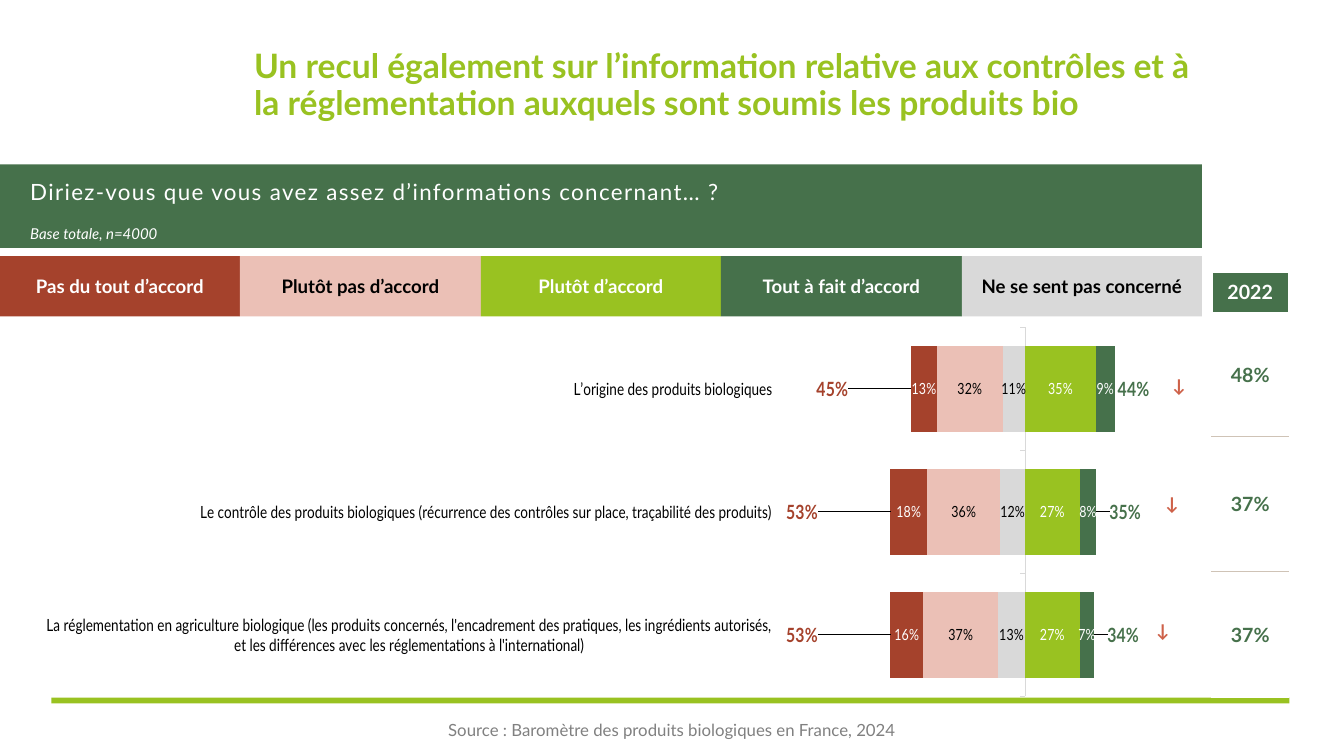
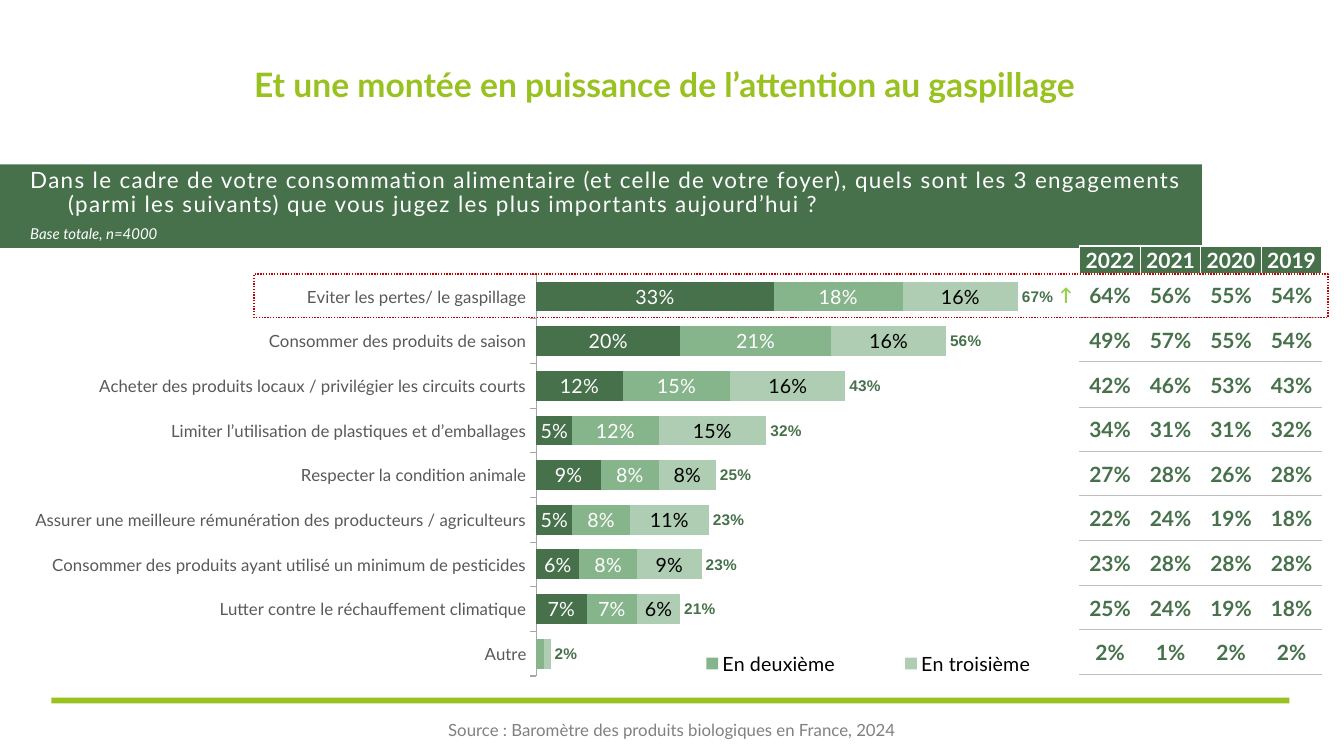
"""Build two survey slides on organic products and food commitments."""
from copy import deepcopy
from dataclasses import dataclass

from pptx import Presentation
from pptx.chart.data import CategoryChartData
from pptx.dml.color import RGBColor
from pptx.enum.chart import XL_CHART_TYPE, XL_LABEL_POSITION, XL_LEGEND_POSITION
from pptx.enum.chart import XL_TICK_LABEL_POSITION, XL_TICK_MARK
from pptx.enum.dml import MSO_LINE
from pptx.enum.shapes import MSO_SHAPE
from pptx.enum.text import MSO_ANCHOR, MSO_AUTO_SIZE, PP_ALIGN
from pptx.oxml import parse_xml
from pptx.oxml.ns import nsdecls, qn
from pptx.util import Pt


@dataclass(frozen=True)
class Theme:
    """Colours, fonts and type sizes."""
    font: str = "Lato"
    number_font: str = "Arial"
    arrow_font: str = "Calibri"
    white: str = "FFFFFF"
    black: str = "000000"
    lime: str = "99C221"
    green: str = "46714B"
    sage: str = "86B48B"
    mint: str = "AECDB2"
    brick: str = "A5422C"
    rose: str = "EBC0B6"
    light_gray: str = "D9D9D9"
    axis_gray: str = "A6A6A6"
    rule_gray: str = "BFBFBF"
    rule_beige: str = "CFC3B6"
    text_gray: str = "595959"
    source_gray: str = "808080"
    fall: str = "CE6149"
    rise: str = "92D050"
    frame: str = "C00000"
    title_size: float = 24
    question_size: float = 16
    base_size: float = 10.7
    small_size: float = 12
    key_size: float = 13.3
    label_size: float = 11
    value_size: float = 14
    table_size: float = 15


THEME = Theme()
PX = 9144
SLIDE_SIZE = (1333, 750)
TITLE_BOX = (252, 38, 940, 95)
QUESTION_BOX = (30, 163, 1162, 58)
BASE_BOX = (30, 223, 1162, 20)
BANDS = [((0, 163, 1192, 83), THEME.green), ((51, 692, 1228, 6), THEME.lime)]
SOURCE_BOX = (385, 697, 563, 54)
SOURCE = "Source : Baromètre des produits biologiques en France, 2024"
BASE = "Base totale, n=4000"

ANSWERS = [
    ("Pas du tout d’accord", THEME.brick, THEME.white),
    ("Plutôt pas d’accord", THEME.rose, THEME.black),
    ("Plutôt d’accord", THEME.lime, THEME.white),
    ("Tout à fait d’accord", THEME.green, THEME.white),
    ("Ne se sent pas concerné", THEME.light_gray, THEME.black),
]
ANSWER_STRIP = (0, 254, 1192, 60)

INFORMATION = {
    "title": "Un recul également sur l’information relative aux contrôles et à la réglementation "
             "auxquels sont soumis les produits bio",
    "question": "Diriez-vous que vous avez assez d’informations concernant… ?",
    "chart": {
        "box": (46, 324, 1217, 367), "plot": (0.502, 0, 0.494, 0.999), "gap": 43,
        "range": {"minimum_scale": -1.2, "maximum_scale": 1.2},
        "axis": {"tick_label_position": XL_TICK_LABEL_POSITION.LOW},
        "axis_text": THEME.black, "axis_line": THEME.light_gray,
        "categories": [
            "La réglementation en agriculture biologique (les produits concernés, l'encadrement des "
            "pratiques, les ingrédients autorisés, et les différences avec les réglementations à "
            "l'international)",
            "Le contrôle des produits biologiques (récurrence des contrôles sur place, "
            "traçabilité des produits)",
            "L’origine des produits biologiques",
        ],
        "series": [
            {"name": "Series 1", "values": (0.27, 0.27, 0.35), "fill": THEME.lime, "text": THEME.white},
            {"name": "Series 2", "values": (0.07, 0.08, 0.09), "fill": THEME.green, "text": THEME.white},
            {"name": "Series 3", "values": (-0.13, -0.12, -0.11), "fill": THEME.light_gray,
             "text": THEME.black},
            {"name": "Series 4", "values": (-0.37, -0.36, -0.32), "fill": THEME.rose, "text": THEME.black},
            {"name": "Series 5", "values": (-0.16, -0.18, -0.13), "fill": THEME.brick,
             "text": THEME.white},
            {"name": "Series 6", "values": (0.34, 0.35, 0.44), "text": THEME.green,
             "size": THEME.value_size, "total": True, "shifts": (0.01, 0.01, 0)},
            {"name": "Series 7", "values": (-0.53, -0.53, -0.45), "text": THEME.brick,
             "size": THEME.value_size, "total": True, "shifts": (-0.07, -0.07, -0.06)},
        ],
    },
    "table": {
        "place": (1202, 270), "widths": [76], "heights": [40, 123, 134, 125],
        "rows": [["2022"], ["48%"], ["37%"], ["37%"]],
        "rules": [THEME.white, THEME.rule_beige, THEME.rule_beige, THEME.white],
        "size": THEME.value_size, "margins": (13, 7, 13, 7),
    },
    "arrows": [("↓", THEME.fall, place) for place in ((1161, 371), (1154, 488), (1145, 614))],
}

COMMITMENT_ROWS = 9
COMMITMENT_HEIGHT = 398
COMMITMENT_EDGES = [round(COMMITMENT_HEIGHT * row / COMMITMENT_ROWS) for row in range(COMMITMENT_ROWS + 1)]
COMMITMENTS = {
    "title": "Et une montée en puissance de l’attention au gaspillage",
    "question": "Dans le cadre de votre consommation alimentaire (et celle de votre foyer), quels sont "
                "les 3 engagements (parmi les suivants) que vous jugez les plus importants aujourd’hui ?",
    "chart": {
        "box": (7, 262, 1078, 433), "plot": (0.487, 0.023, 0.463, 0.921), "gap": 50,
        "range": {"minimum_scale": 0, "maximum_scale": 0.7}, "axis": {"reverse_order": True},
        "axis_text": THEME.text_gray, "axis_line": THEME.axis_gray,
        "legend": {"layout": (0.585, 0.88, 0.415, 0.07), "hidden": (0, 3)},
        "categories": [
            "Eviter les pertes/ le gaspillage",
            "Consommer des produits de saison",
            "Acheter des produits locaux / privilégier les circuits courts",
            "Limiter l’utilisation de plastiques et d’emballages",
            "Respecter la condition animale",
            "Assurer une meilleure rémunération des producteurs / agriculteurs",
            "Consommer des produits ayant utilisé un minimum de pesticides",
            "Lutter contre le réchauffement climatique",
            "Autre",
        ],
        "series": [
            {"name": "En premier", "values": (0.33, 0.2, 0.12, 0.05, 0.09, 0.05, 0.06, 0.07, 0),
             "fill": THEME.green, "text": THEME.white, "size": THEME.value_size, "unlabelled": 8},
            {"name": "En deuxième", "values": (0.18, 0.21, 0.15, 0.12, 0.08, 0.08, 0.08, 0.07, 0.01),
             "fill": THEME.sage, "text": THEME.white, "size": THEME.value_size, "unlabelled": 8},
            {"name": "En troisième", "values": (0.16, 0.16, 0.16, 0.15, 0.08, 0.11, 0.09, 0.06, 0.01),
             "fill": THEME.mint, "text": THEME.black, "size": THEME.value_size, "unlabelled": 8},
            {"name": "Series 4", "values": (0.67, 0.56, 0.43, 0.32, 0.25, 0.23, 0.23, 0.21, 0.02),
             "fill": THEME.white, "text": THEME.green, "total": True, "font": THEME.number_font},
        ],
    },
    "table": {
        "place": (1071, 244), "widths": [60] * 4,
        "heights": [27] + [end - start for start, end in zip(COMMITMENT_EDGES, COMMITMENT_EDGES[1:])],
        "rows": [line.split() for line in (
            "2022 2021 2020 2019", "64% 56% 55% 54%", "49% 57% 55% 54%", "42% 46% 53% 43%",
            "34% 31% 31% 32%", "27% 28% 26% 28%", "22% 24% 19% 18%", "23% 28% 28% 28%",
            "25% 24% 19% 18%", "2% 1% 2% 2%")],
        "rules": [THEME.white] + [THEME.rule_gray] * COMMITMENT_ROWS,
        "size": THEME.table_size, "margins": (1, 1, 1, 0),
    },
    "arrows": [("↑", THEME.rise, (1049, 281))],
}
HIGHLIGHT_BOX = (252, 272, 1065, 43)


def emu(lengths):
    return [length * PX for length in lengths]


def apply(target, values):
    for name, value in values.items():
        setattr(target, name, value)


def format_font(font, size, color, **values):
    apply(font, {"name": THEME.font, "size": Pt(size), **values})
    font.color.rgb = RGBColor.from_string(color)


def write(shape, text, size, color, align=PP_ALIGN.LEFT, margins=(0, 0, 0, 0), wrap=True, spacing=1.0,
          anchor=MSO_ANCHOR.MIDDLE, **font_values):
    frame = shape.text_frame
    names = ("margin_left", "margin_top", "margin_right", "margin_bottom")
    apply(frame, {"word_wrap": wrap, "auto_size": MSO_AUTO_SIZE.NONE, "vertical_anchor": anchor,
                  **dict(zip(names, emu(margins)))})
    paragraph = frame.paragraphs[0]
    apply(paragraph, {"alignment": align, "line_spacing": spacing, "space_before": Pt(0)})
    run = paragraph.add_run()
    run.text = text
    format_font(run.font, size, color, **font_values)
    return paragraph


def add_rectangle(slide, box, fill=None):
    shape = slide.shapes.add_shape(MSO_SHAPE.RECTANGLE, *emu(box))
    shape.shadow.inherit = False
    shape.line.fill.background()
    if fill:
        shape.fill.solid()
        shape.fill.fore_color.rgb = RGBColor.from_string(fill)
    else:
        shape.fill.background()
    return shape


def move_bands_to_layout(slide):
    shapes = [add_rectangle(slide, box, fill) for box, fill in BANDS]
    source = slide.shapes.add_textbox(*emu(SOURCE_BOX))
    write(source, SOURCE, THEME.small_size, THEME.source_gray, PP_ALIGN.CENTER, (13, 7, 13, 7))
    for number, shape in enumerate(shapes + [source], 20):
        shape.element.nvSpPr.cNvPr.set("id", str(number))
        slide.slide_layout.shapes.element.append(shape.element)


def fill_placeholders(slide, content):
    title, question, base = slide.placeholders
    entries = [
        (title, TITLE_BOX, content["title"], THEME.title_size, THEME.lime, {"bold": True}),
        (question, QUESTION_BOX, content["question"], THEME.question_size, THEME.white, {}),
        (base, BASE_BOX, BASE, THEME.base_size, THEME.white, {"italic": True}),
    ]
    for shape, box, text, size, color, values in entries:
        apply(shape, dict(zip(("left", "top", "width", "height"), emu(box))))
        paragraph = write(shape, text, size, color, spacing=0.9, **values)
        if shape is not title:
            properties = paragraph._p.get_or_add_pPr()
            apply(properties, {"marL": 0, "indent": 0})
            properties.append(parse_xml(f"<a:buNone {nsdecls('a')}/>"))
    question.text_frame.paragraphs[0].runs[0].font._element.set("spc", "100")


def manual_layout(box, inner=False):
    target = '<c:layoutTarget val="inner"/>' if inner else ""
    modes = "".join(f'<c:{axis}Mode val="edge"/>' for axis in "xy")
    sizes = "".join(f'<c:{name} val="{value}"/>' for name, value in zip("xywh", box))
    return parse_xml(f"<c:layout {nsdecls('c')}><c:manualLayout>{target}{modes}{sizes}"
                     "</c:manualLayout></c:layout>")


def remove_layout(element):
    for layout in element.findall(qn("c:layout")):
        element.remove(layout)


def shift_labels(labels, shifts):
    group = labels._element
    skipped = (qn("c:showLeaderLines"), qn("c:dLbl"))
    shared = [child for child in group if child.tag not in skipped]
    for index, shift in enumerate(shifts):
        label = parse_xml(
            f"<c:dLbl {nsdecls('c')}><c:idx val=\"{index}\"/><c:layout><c:manualLayout>"
            f'<c:x val="{shift}"/><c:y val="0"/></c:manualLayout></c:layout></c:dLbl>')
        label.extend(deepcopy(child) for child in shared)
        group.insert(index, label)


def format_series(series, entry):
    series.invert_if_negative = False
    if "fill" in entry:
        series.format.fill.solid()
        series.format.fill.fore_color.rgb = RGBColor.from_string(entry["fill"])
    else:
        series.format.fill.background()
    total = entry.get("total", False)
    labels = series.data_labels
    apply(labels, {"show_value": True, "number_format": "0%;0%", "number_format_is_linked": False,
                   "position": XL_LABEL_POSITION.INSIDE_BASE if total else XL_LABEL_POSITION.CENTER})
    format_font(labels.font, entry.get("size", THEME.label_size), entry["text"], bold=total,
                name=entry.get("font", THEME.font))
    shift_labels(labels, entry.get("shifts", ()))
    if "unlabelled" in entry:
        labels._element.insert(0, parse_xml(
            f"<c:dLbl {nsdecls('c')}><c:idx val=\"{entry['unlabelled']}\"/>"
            '<c:delete val="1"/></c:dLbl>'))


def add_legend(chart, content):
    chart.has_legend = True
    apply(chart.legend, {"position": XL_LEGEND_POSITION.BOTTOM, "include_in_layout": False})
    format_font(chart.legend.font, THEME.value_size, THEME.black)
    element = chart.legend._element
    remove_layout(element)
    parts = [parse_xml(f"<c:legendEntry {nsdecls('c')}><c:idx val=\"{index}\"/>"
                       '<c:delete val="1"/></c:legendEntry>') for index in content["hidden"]]
    for position, part in enumerate(parts + [manual_layout(content["layout"])], 1):
        element.insert(position, part)


def add_bar_chart(slide, content):
    data = CategoryChartData(number_format="0%")
    data.categories = content["categories"]
    for entry in content["series"]:
        data.add_series(entry["name"], entry["values"])
    chart = slide.shapes.add_chart(XL_CHART_TYPE.BAR_STACKED, *emu(content["box"]), data).chart
    apply(chart, {"has_title": False, "has_legend": False})
    format_font(chart.font, 10, THEME.black, name=THEME.number_font)
    plot = chart.plots[0]
    apply(plot, {"gap_width": content["gap"], "overlap": 100, "vary_by_categories": False})
    apply(chart.value_axis, {"visible": False, "has_major_gridlines": False, **content["range"]})
    axis = chart.category_axis
    apply(axis, {"major_tick_mark": XL_TICK_MARK.OUTSIDE, "has_major_gridlines": False, **content["axis"]})
    format_font(axis.tick_labels.font, THEME.small_size, content["axis_text"])
    axis.format.line.width = Pt(0.75)
    axis.format.line.color.rgb = RGBColor.from_string(content["axis_line"])
    for series, entry in zip(plot.series, content["series"]):
        format_series(series, entry)
    area = chart.element.find(".//" + qn("c:plotArea"))
    remove_layout(area)
    area.insert(0, manual_layout(content["plot"], inner=True))
    if "legend" in content:
        add_legend(chart, content["legend"])


def set_borders(cell, top, bottom):
    colors = {"L": THEME.white, "R": THEME.white, "T": top, "B": bottom}
    for position, (side, color) in enumerate(colors.items()):
        cell._tc.get_or_add_tcPr().insert(position, parse_xml(
            f'<a:ln{side} {nsdecls("a")} w="12700"><a:solidFill><a:srgbClr val="{color}"/>'
            f"</a:solidFill></a:ln{side}>"))


def add_history_table(slide, content):
    rows, widths, heights = content["rows"], content["widths"], content["heights"]
    box = (*content["place"], sum(widths), sum(heights))
    table = slide.shapes.add_table(len(rows), len(widths), *emu(box)).table
    for column, width in zip(table.columns, emu(widths)):
        column.width = width
    for row, height in zip(table.rows, emu(heights)):
        row.height = height
    names = ("margin_left", "margin_top", "margin_right", "margin_bottom")
    tops = [THEME.white] + content["rules"]
    for row_index, values in enumerate(rows):
        fill, color = (THEME.white, THEME.green) if row_index else (THEME.green, THEME.white)
        for column_index, value in enumerate(values):
            cell = table.cell(row_index, column_index)
            apply(cell, {"text": value, "vertical_anchor": MSO_ANCHOR.MIDDLE,
                         **dict(zip(names, emu(content["margins"])))})
            cell.fill.solid()
            cell.fill.fore_color.rgb = RGBColor.from_string(fill)
            paragraph = cell.text_frame.paragraphs[0]
            paragraph.alignment = PP_ALIGN.CENTER
            format_font(paragraph.runs[0].font, content["size"], color, bold=True)
            set_borders(cell, tops[row_index], content["rules"][row_index])


def add_survey_slide(presentation, content):
    slide = presentation.slides.add_slide(presentation.slide_layouts[3])
    fill_placeholders(slide, content)
    add_bar_chart(slide, content["chart"])
    add_history_table(slide, content["table"])
    for symbol, color, place in content["arrows"]:
        arrow = slide.shapes.add_textbox(*emu((*place, 18, 22)))
        write(arrow, symbol, THEME.key_size, color, wrap=False, anchor=MSO_ANCHOR.TOP, bold=True,
              name=THEME.arrow_font)
    return slide


def add_answer_key(slide):
    left, top, width, height = ANSWER_STRIP
    edges = [left + round(width * index / len(ANSWERS)) for index in range(len(ANSWERS) + 1)]
    for (text, fill, color), start, end in zip(ANSWERS, edges, edges[1:]):
        shape = add_rectangle(slide, (start, top, end - start, height), fill)
        write(shape, text, THEME.key_size, color, PP_ALIGN.CENTER, bold=True)


def main():
    presentation = Presentation()
    apply(presentation, dict(zip(("slide_width", "slide_height"), emu(SLIDE_SIZE))))
    information = add_survey_slide(presentation, INFORMATION)
    move_bands_to_layout(information)
    add_answer_key(information)
    commitments = add_survey_slide(presentation, COMMITMENTS)
    highlight = add_rectangle(commitments, HIGHLIGHT_BOX)
    highlight.line.color.rgb = RGBColor.from_string(THEME.frame)
    apply(highlight.line, {"width": Pt(1), "dash_style": MSO_LINE.ROUND_DOT})
    presentation.save("out.pptx")


if __name__ == "__main__":
    main()
